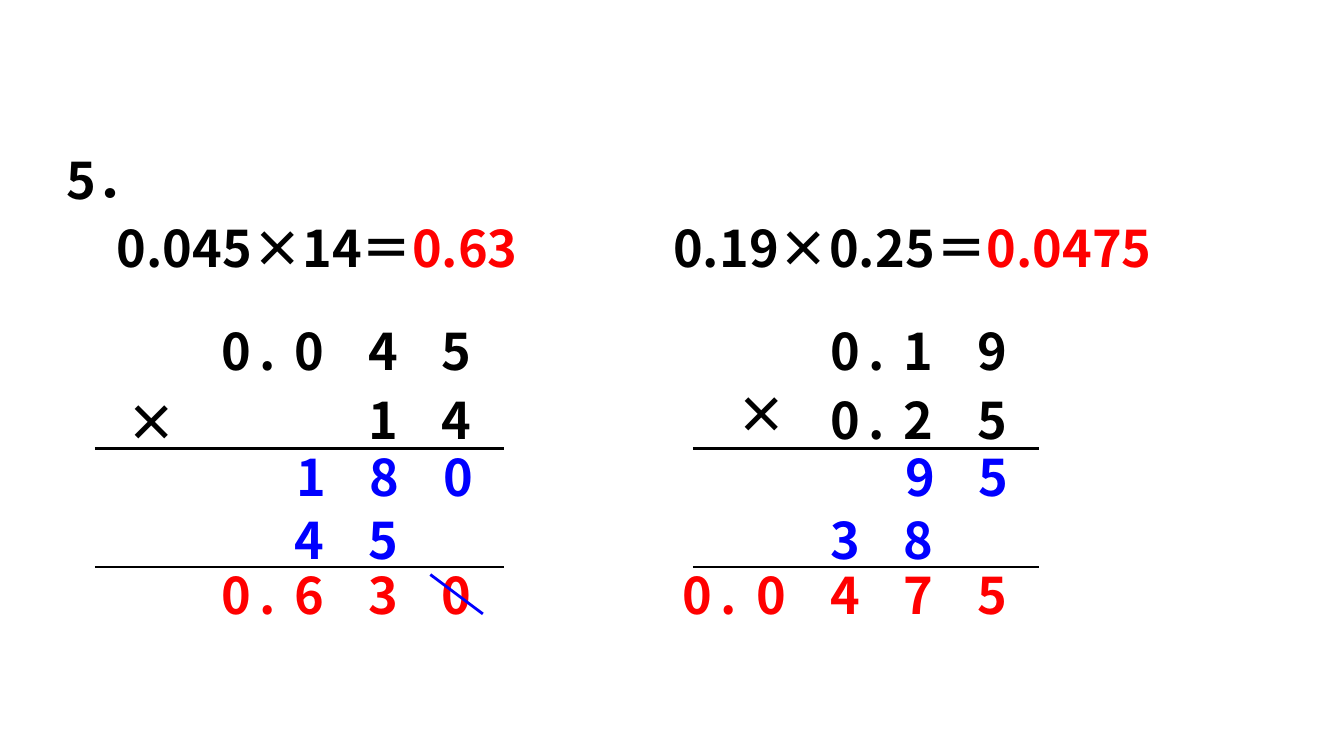
"""Build a slide with two decimal multiplications worked out in columns."""
from dataclasses import dataclass

from lxml.etree import SubElement
from pptx import Presentation
from pptx.dml.color import RGBColor
from pptx.enum.shapes import MSO_CONNECTOR
from pptx.enum.text import MSO_AUTO_SIZE, PP_ALIGN
from pptx.oxml.ns import qn
from pptx.slide import Slide
from pptx.util import Pt

BLACK = RGBColor(0, 0, 0)
BLUE = RGBColor(0, 0, 255)
RED = RGBColor(255, 0, 0)
FONT_NAME = "Noto Sans CJK SC"
FONT_FORMAT = {"name": FONT_NAME, "size": Pt(36), "bold": True}
FRAME_FORMAT = {"word_wrap": True, "auto_size": MSO_AUTO_SIZE.SHAPE_TO_FIT_TEXT}
CELL_WIDTH = 51.8
CELL_HEIGHT = 50.4
COLUMN_PITCH = 52.6
POINT_OFFSET = 22.5
EQUATION_TOP = 151.9
RULE_TOPS = (320.4, 405)


@dataclass(frozen=True)
class ColoredText:
    text: str
    color: RGBColor = BLACK


@dataclass(frozen=True)
class TextLine:
    left: float
    top: float
    width: float
    pieces: tuple[ColoredText, ...]


@dataclass(frozen=True)
class NumberRow:
    number: str
    top: float
    color: RGBColor = BLACK
    skipped_columns: int = 0
    shift: float = 0


@dataclass(frozen=True)
class Calculation:
    last_column: float
    rule_start: float
    rule_end: float
    times_left: float
    times_top: float
    rows: tuple[NumberRow, ...]


TEXT_LINES = (
    TextLine(40.3, 103, 877.7, (ColoredText("5．"),)),
    TextLine(76.3, EQUATION_TOP, 254.2, (ColoredText("0.045×14"),)),
    TextLine(251.3, EQUATION_TOP, 208.8, (ColoredText("＝"), ColoredText("0.63", RED))),
    TextLine(473.8, EQUATION_TOP, 239, (ColoredText("0.19×0.25"),)),
    TextLine(661.7, EQUATION_TOP, 208.8, (ColoredText("＝"), ColoredText("0.0475", RED))),
)


def number_rows(first: str, second: str, ones: str, tens: str, product: str) -> tuple[NumberRow, ...]:
    """Lay out the factors, partial products and product of one calculation."""
    return (
        NumberRow(first, 225),
        NumberRow(second, 274.3),
        NumberRow(ones, 315.4, BLUE, shift=1),
        NumberRow(tens, 360, BLUE, skipped_columns=1),
        NumberRow(product, 399.6, RED),
    )


CALCULATIONS = (
    Calculation(300.4, 67.7, 360, 82.8, 275.8, number_rows("0.045", "14", "180", "45", "0.630")),
    Calculation(682.8, 495, 742.3, 518.4, 270, number_rows("0.19", "0.25", "95", "38", "0.0475")),
)


def add_text(slide: Slide, line: TextLine, alignment: PP_ALIGN = PP_ALIGN.LEFT) -> None:
    """Add one line of bold text made of coloured pieces."""
    shape = slide.shapes.add_textbox(Pt(line.left), Pt(line.top), Pt(line.width), Pt(CELL_HEIGHT))
    for name, value in FRAME_FORMAT.items():
        setattr(shape.text_frame, name, value)
    paragraph = shape.text_frame.paragraphs[0]
    paragraph.alignment = alignment
    for piece in line.pieces:
        run = paragraph.add_run()
        run.text = piece.text
        for name, value in FONT_FORMAT.items():
            setattr(run.font, name, value)
        run.font.color.rgb = piece.color
        SubElement(run._r.get_or_add_rPr(), qn("a:ea"), typeface=FONT_NAME)


def add_symbol(slide: Slide, symbol: str, left: float, top: float, color: RGBColor = BLACK) -> None:
    """Add one centred symbol in a cell."""
    add_text(slide, TextLine(left, top, CELL_WIDTH, (ColoredText(symbol, color),)), PP_ALIGN.CENTER)


def add_line(slide: Slide, start: tuple[float, float], end: tuple[float, float], color: RGBColor = BLACK) -> None:
    """Add a straight line without a shadow."""
    connector = slide.shapes.add_connector(
        MSO_CONNECTOR.STRAIGHT, *(Pt(length) for length in start + end)
    )
    connector.line.color.rgb = color
    connector.line.width = Pt(2)
    SubElement(connector._element.spPr, qn("a:effectLst"))


def add_number(slide: Slide, row: NumberRow, last_column: float) -> None:
    """Place the digits of a number in columns, with its point between two of them."""
    digit_count = len(row.number.replace(".", ""))
    first_column = last_column + row.shift - (digit_count - 1 + row.skipped_columns) * COLUMN_PITCH
    column = 0
    for symbol in row.number:
        left = first_column + column * COLUMN_PITCH
        if symbol == ".":
            add_symbol(slide, symbol, left - COLUMN_PITCH + POINT_OFFSET, row.top, row.color)
        else:
            add_symbol(slide, symbol, left, row.top, row.color)
            column += 1


def add_calculation(slide: Slide, calculation: Calculation) -> None:
    """Draw the rules, times sign and number rows of a calculation."""
    for top in RULE_TOPS:
        add_line(slide, (calculation.rule_start, top), (calculation.rule_end, top))
    add_symbol(slide, "×", calculation.times_left, calculation.times_top)
    for row in calculation.rows:
        add_number(slide, row, calculation.last_column)


def main() -> None:
    """Build and save the presentation."""
    presentation = Presentation()
    presentation.slide_width = Pt(960)
    presentation.slide_height = Pt(540)
    slide = presentation.slides.add_slide(presentation.slide_layouts[6])
    for line in TEXT_LINES:
        add_text(slide, line)
    for calculation in CALCULATIONS:
        add_calculation(slide, calculation)
    add_line(slide, (307.4, 410.4), (344.9, 438.5), BLUE)
    presentation.save("out.pptx")


if __name__ == "__main__":
    main()
